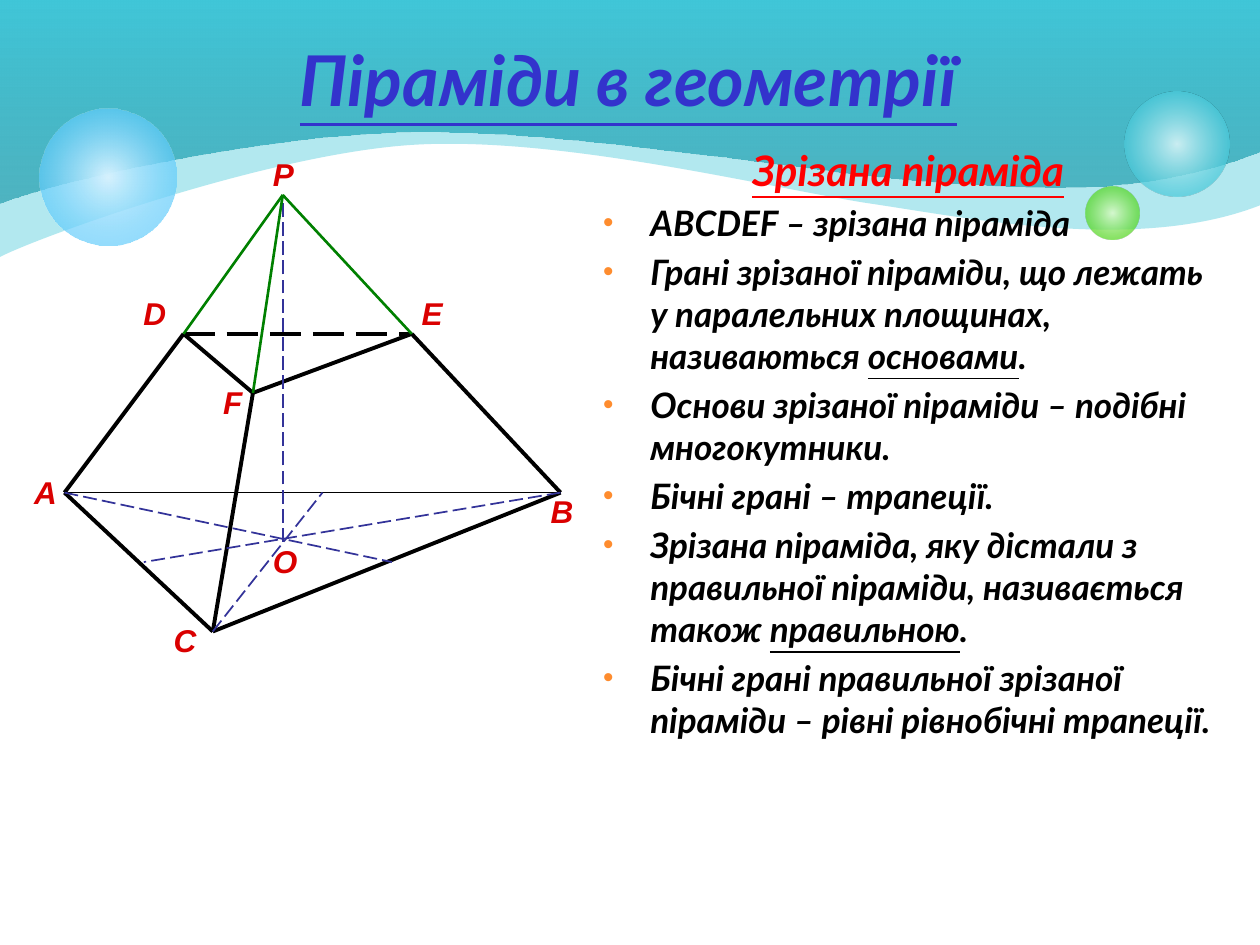
from lxml import etree
from pptx import Presentation
from pptx.dml.color import RGBColor
from pptx.enum.dml import MSO_LINE
from pptx.enum.shapes import MSO_CONNECTOR, MSO_SHAPE
from pptx.enum.text import MSO_ANCHOR, PP_ALIGN
from pptx.oxml import parse_xml
from pptx.oxml.ns import qn
from pptx.util import Cm, Pt

STRAIGHT = MSO_CONNECTOR.STRAIGHT
LONG_DASH = MSO_LINE.LONG_DASH
OVAL = MSO_SHAPE.OVAL
CENTER = PP_ALIGN.CENTER
MIDDLE = MSO_ANCHOR.MIDDLE

BLACK = RGBColor(0x00, 0x00, 0x00)
RED = RGBColor(0xFF, 0x00, 0x00)
LABEL_RED = RGBColor(0xDA, 0x00, 0x00)
TITLE_BLUE = RGBColor(0x33, 0x33, 0xCC)
MEDIAN_BLUE = RGBColor(0x33, 0x33, 0x99)
GREEN = RGBColor(0x00, 0x80, 0x00)
ORANGE = RGBColor(0xFE, 0x8C, 0x2E)
TURQUOISE = RGBColor(0x40, 0xC6, 0xD8)
DARK_TURQUOISE = RGBColor(0x24, 0x9E, 0xAE)
PALE_TURQUOISE = RGBColor(0xD9, 0xF4, 0xF7)
LIME = RGBColor(0x4C, 0xD4, 0x16)
PALE_LIME = RGBColor(0xDA, 0xFA, 0xCD)
SKY = RGBColor(0x33, 0xBD, 0xFB)
PALE_SKY = RGBColor(0xD6, 0xF2, 0xFE)

DRAWING_NS = "http://schemas.openxmlformats.org/drawingml/2006/main"
UPWARD = '<a:lin ang="16200000" scaled="0"/>'
RADIAL = ('<a:path path="circle"><a:fillToRect l="50000" t="50000" '
          'r="50000" b="50000"/></a:path>')

# Each wave in cm: starting point, then two controls and an end per curve.
BACK_WAVE = [
    (0, 5.18),
    (0.84, 4.75), (5.44, 3.1), (8.33, 2.92),
    (11.25, 2.74), (15.39, 3.76), (17.45, 4.09),
    (19.51, 4.39), (22.91, 5.11), (25.4, 4.14)]
FRONT_WAVE = [
    (0, 4.11),
    (1.14, 3.66), (5.16, 2.74), (8.28, 2.67),
    (11.4, 2.59), (16.71, 3.53), (18.72, 3.66),
    (20.73, 3.78), (22.91, 4.04), (25.4, 3.07)]
TOP_CORNERS = [(25.43, 0), (0, 0)]

# Left, top, diameter in cm, then the gradient stops.
BUBBLES = [
    (22.68, 1.85, 2.11, [(0, PALE_TURQUOISE, 90), (76, TURQUOISE, 70)]),
    (21.89, 3.76, 1.07, [(0, PALE_LIME, 90), (76, LIME, 70)]),
    (0.79, 2.18, 2.77, [(0, PALE_SKY, 100), (100, SKY, 54)])]

VERTICES = {
    "A": (1.3, 9.93), "B": (11.3, 9.93), "C": (4.29, 12.73),
    "D": (3.7, 6.73), "E": (8.3, 6.73), "F": (5.1, 7.92),
    "P": (5.7, 3.93), "O": (5.7, 10.92),
    "mid AB": (6.5, 9.93), "mid BC": (7.9, 11.33), "mid AC": (2.9, 11.33)}
# Left, top and width in cm.
LABELS = {
    "A": (0.69, 9.53, 0.8), "C": (3.5, 12.52, 1.2), "B": (11.1, 9.92, 0.6),
    "O": (5.5, 10.92, 0.8), "P": (5.5, 3.12, 0.8), "D": (2.89, 5.92, 0.6),
    "F": (4.5, 7.72, 0.8), "E": (8.5, 5.92, 0.8)}
EDGE_GROUPS = [
    (["AB"], BLACK, 1, None),
    (["AC", "CB", "DA", "EB", "FC", "DF", "FE"], BLACK, 2.25, None),
    (["DE"], BLACK, 2.25, LONG_DASH),
    (["OP", ("C", "mid AB"), ("A", "mid BC"), ("B", "mid AC")],
     MEDIAN_BLUE, 1, LONG_DASH),
    (["PD", "PF", "PE"], GREEN, 1.5, None)]

# Each statement: plain text, underlined term, closing text.
STATEMENTS = [
    ("ABCDEF – зрізана піраміда",),
    ("Грані зрізаної піраміди, що лежать у паралельних площинах, називаються ",
     "основами", "."),
    ("Основи зрізаної піраміди – подібні многокутники.",),
    ("Бічні грані – трапеції.",),
    ("Зрізана піраміда, яку дістали з правильної піраміди, називається також ",
     "правильною", "."),
    ("Бічні грані правильної зрізаної піраміди – рівні рівнобічні трапеції.",)]


def fill_gradient(shape, stops, direction):
    """Fill with (position, colour, opacity) stops, all in percent."""
    shape.fill.background()
    stop_xml = "".join(
        f'<a:gs pos="{position * 1000}"><a:srgbClr val="{color}">'
        f'<a:alpha val="{opacity * 1000}"/></a:srgbClr></a:gs>'
        for position, color, opacity in stops)
    gradient = parse_xml(f'<a:gradFill xmlns:a="{DRAWING_NS}" rotWithShape="1">'
                         f'<a:gsLst>{stop_xml}</a:gsLst>{direction}</a:gradFill>')
    properties = shape._element.spPr
    properties.replace(properties.find(qn("a:noFill")), gradient)


def bend_segments(shape, curve_count):
    """Join each three leading line segments into one Bezier curve."""
    lines = list(shape._element.iter(qn("a:lnTo")))
    for index in range(0, curve_count * 3, 3):
        curve = etree.Element(qn("a:cubicBezTo"))
        lines[index].addprevious(curve)
        for line in lines[index:index + 3]:
            curve.append(line[0])
            line.getparent().remove(line)


def add_wave(slide, wave):
    start, *points = wave
    builder = slide.shapes.build_freeform(Cm(start[0]), Cm(start[1]))
    builder.add_line_segments([(Cm(x), Cm(y)) for x, y in points + TOP_CORNERS])
    shape = builder.convert_to_shape()
    bend_segments(shape, len(points) // 3)
    shape.shadow.inherit = False
    shape.line.fill.background()
    return shape


def add_bubble(slide, left, top, diameter, stops):
    shape = slide.shapes.add_shape(OVAL, Cm(left), Cm(top), Cm(diameter), Cm(diameter))
    shape.shadow.inherit = False
    shape.line.fill.background()
    fill_gradient(shape, stops, RADIAL)


def add_background(slide):
    back = add_wave(slide, BACK_WAVE)
    back.fill.solid()
    back.fill.fore_color.rgb = TURQUOISE
    color = back._element.spPr.find(qn("a:solidFill"))[0]
    etree.SubElement(color, qn("a:alpha"), val="40000")
    front = add_wave(slide, FRONT_WAVE)
    fill_gradient(front, [(0, DARK_TURQUOISE, 69), (100, TURQUOISE, 100)], UPWARD)
    for bubble in BUBBLES:
        add_bubble(slide, *bubble)


def add_edge(slide, start, end, color, width, dash):
    x1, y1, x2, y2 = (Cm(value) for value in VERTICES[start] + VERTICES[end])
    edge = slide.shapes.add_connector(STRAIGHT, x1, y1, x2, y2)
    edge.line.color.rgb = color
    edge.line.width = Pt(width)
    if dash:
        edge.line.dash_style = dash
    etree.SubElement(edge._element.spPr, qn("a:effectLst"))


def add_text_frame(slide, left, top, width, height):
    box = slide.shapes.add_textbox(Cm(left), Cm(top), Cm(width), Cm(height))
    box.text_frame.word_wrap = True
    return box.text_frame


def set_font(paragraph, name, size, color, underline=None):
    font = paragraph.font
    font.name, font.size, font.color.rgb = name, Pt(size), color
    font.bold = font.italic = True
    font.underline = underline


def add_title(slide):
    frame = add_text_frame(slide, 0.84, 0.64, 23.65, 1.88)
    frame.vertical_anchor = MIDDLE
    paragraph = frame.paragraphs[0]
    paragraph.text = "Піраміди в геометрії"
    paragraph.alignment = CENTER
    set_font(paragraph, "Lato", 40, TITLE_BLUE, underline=True)


def add_label(slide, letter, left, top, width):
    frame = add_text_frame(slide, left, top, width, 0.76)
    frame.margin_left = frame.margin_right = frame.margin_top = frame.margin_bottom = 0
    paragraph = frame.paragraphs[0]
    paragraph.text = letter
    set_font(paragraph, "Arial", 18, LABEL_RED)


def hang_indent(paragraph, bullet=None):
    properties = paragraph._p.get_or_add_pPr()
    properties.set("marL", str(Cm(0.95)))
    properties.set("indent", str(-Cm(0.95)))
    if bullet:
        color = etree.SubElement(properties, qn("a:buClr"))
        etree.SubElement(color, qn("a:srgbClr"), val=str(ORANGE))
        etree.SubElement(properties, qn("a:buSzPct"), val="85000")
        etree.SubElement(properties, qn("a:buFont"), typeface="Arial")
        etree.SubElement(properties, qn("a:buChar"), char=bullet)


def add_statements(slide):
    frame = add_text_frame(slide, 11.91, 2.78, 12.8, 15.47)
    heading = frame.paragraphs[0]
    heading.text = "Зрізана піраміда"
    heading.alignment = CENTER
    heading.space_before = Pt(5)
    hang_indent(heading)
    set_font(heading, "Lato", 24, RED, underline=True)
    for parts in STATEMENTS:
        paragraph = frame.add_paragraph()
        paragraph.space_before = Pt(4)
        hang_indent(paragraph, "•")
        for index, text in enumerate(parts):
            run = paragraph.add_run()
            run.text = text
            if index == 1:
                run.font.underline = True
        set_font(paragraph, "Lato", 20, BLACK)


def main():
    presentation = Presentation()
    presentation.slide_width, presentation.slide_height = Cm(25.4), Cm(19.05)
    slide = presentation.slides.add_slide(presentation.slide_layouts[6])
    add_background(slide)
    add_statements(slide)
    add_title(slide)
    for edges, color, width, dash in EDGE_GROUPS:
        for start, end in edges:
            add_edge(slide, start, end, color, width, dash)
    for letter, place in LABELS.items():
        add_label(slide, letter, *place)
    presentation.save("out.pptx")


if __name__ == "__main__":
    main()
